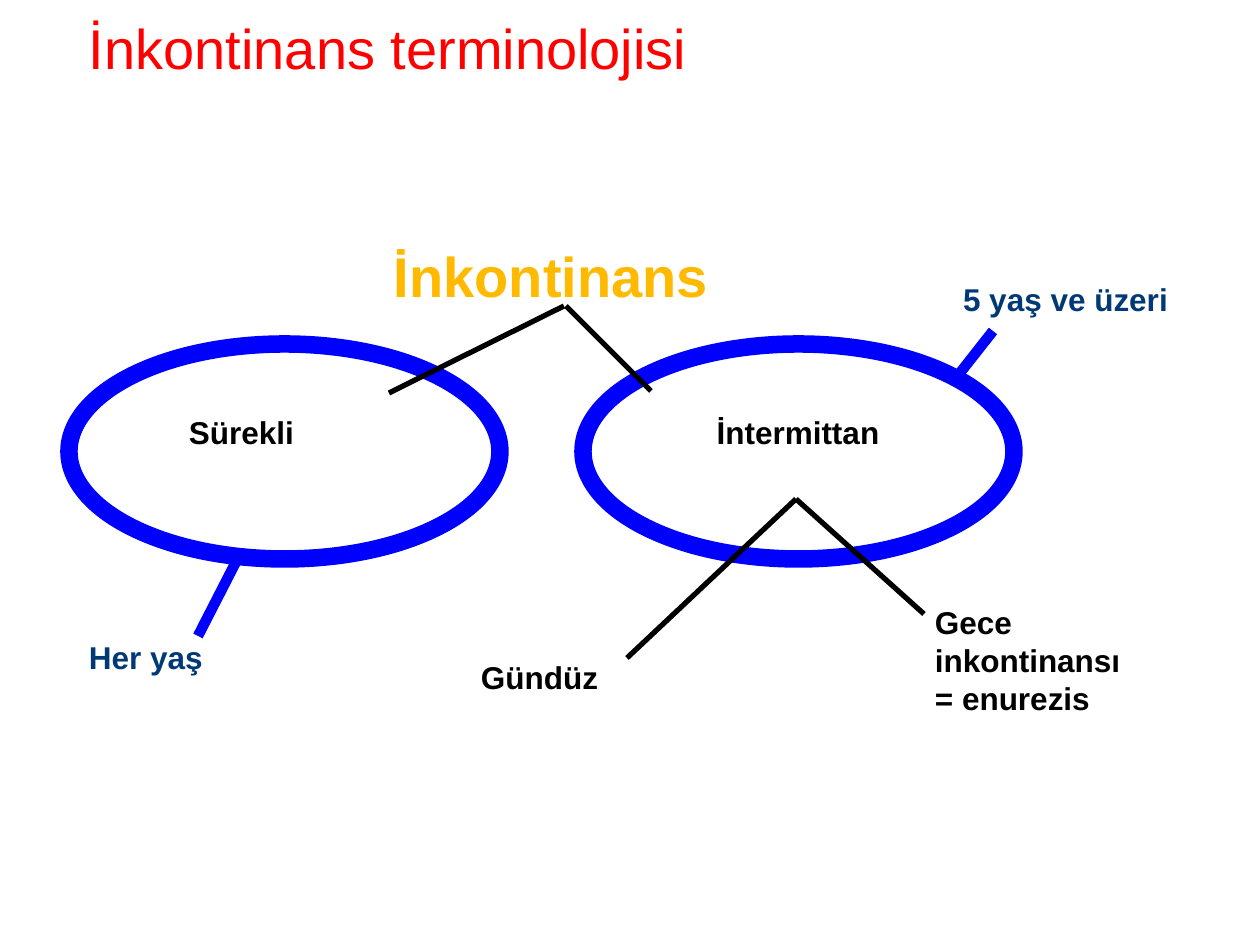
from lxml.etree import SubElement
from pptx import Presentation
from pptx.dml.color import RGBColor
from pptx.enum.shapes import MSO_CONNECTOR, MSO_SHAPE
from pptx.enum.text import MSO_ANCHOR, PP_ALIGN
from pptx.oxml.ns import qn
from pptx.util import Pt

SCALE = 914400 / 126
BLUE, NAVY, BLACK, RED, AMBER = "0000FF", "003975", "000000", "FF0000", "FFBA00"
INSET = (13, 6)
FLUSH = (0, 0)

OVALS = [(69, 344, 431, 215), (583, 344, 431, 215)]

LABELS = [
    (["İnkontinans"], (381, 236, 341, 81), 32, True, AMBER, INSET, False, PP_ALIGN.LEFT),
    (["Sürekli"], (189, 413, 115, 38), 18, True, BLACK, FLUSH, False, PP_ALIGN.LEFT),
    (["İntermittan"], (716, 413, 164, 38), 18, True, BLACK, FLUSH, False, PP_ALIGN.CENTER),
    (["Gündüz"], (481, 658, 118, 38), 18, True, BLACK, FLUSH, False, PP_ALIGN.LEFT),
    (["Gece inkontinansı", "= enurezis"], (922, 597, 290, 127), 18, True, BLACK, INSET, True, PP_ALIGN.LEFT),
    (["Her yaş"], (89, 638, 115, 38), 18, True, NAVY, FLUSH, False, PP_ALIGN.LEFT),
    (["5 yaş ve üzeri"], (963, 280, 207, 38), 18, True, NAVY, FLUSH, False, PP_ALIGN.LEFT),
    (["İnkontinans terminolojisi"], (89, 14, 1346, 195), 32, False, RED, FLUSH, True, PP_ALIGN.LEFT),
]

LINES = [
    ((956, 378), (993, 331), BLUE, 6),
    ((198, 636), (238, 558), BLUE, 6),
    ((389, 393), (564, 306), BLACK, 3),
    ((566, 306), (651, 391), BLACK, 3),
    ((796, 499), (627, 658), BLACK, 3),
    ((796, 499), (924, 614), BLACK, 3),
]


def px(values):
    """Turn px lengths into EMU."""
    return [round(value * SCALE) for value in values]


def color(code):
    """Turn a hex string into a colour."""
    return RGBColor.from_string(code)


def apply(target, values):
    """Set each attribute named in a dict."""
    for name, value in values.items():
        setattr(target, name, value)


def add_oval(page, place):
    """Draw an unfilled blue ellipse."""
    oval = page.shapes.add_shape(MSO_SHAPE.OVAL, *px(place))
    oval.shadow.inherit = False
    oval.fill.background()
    oval.line.color.rgb = color(BLUE)
    oval.line.width = Pt(10)


def add_line(page, start, end, code, width):
    """Draw a plain straight line."""
    line = page.shapes.add_connector(MSO_CONNECTOR.STRAIGHT, *px(start + end))
    line.line.color.rgb = color(code)
    line.line.width = Pt(width)
    SubElement(line._element.spPr, qn("a:effectLst"))


def add_label(page, texts, place, size, bold, code, inset, wrap, align):
    """Place a text box with one paragraph per text."""
    frame = page.shapes.add_textbox(*px(place)).text_frame
    side, top = px(inset)
    apply(frame, {
        "margin_left": side, "margin_right": side, "margin_top": top, "margin_bottom": top,
        "word_wrap": wrap, "vertical_anchor": MSO_ANCHOR.TOP,
    })
    frame.text = "\n".join(texts)
    for para in frame.paragraphs:
        para.alignment = align
        for span in para.runs:
            apply(span.font, {"name": "Arial", "size": Pt(size), "bold": bold})
            span.font.color.rgb = color(code)


def main():
    """Build the slide and save it."""
    deck = Presentation()
    deck.slide_width, deck.slide_height = px((1260, 945))
    page = deck.slides.add_slide(deck.slide_layouts[6])
    for place in OVALS:
        add_oval(page, place)
    for line in LINES:
        add_line(page, *line)
    for label in LABELS:
        add_label(page, *label)
    deck.save("out.pptx")


if __name__ == "__main__":
    main()
